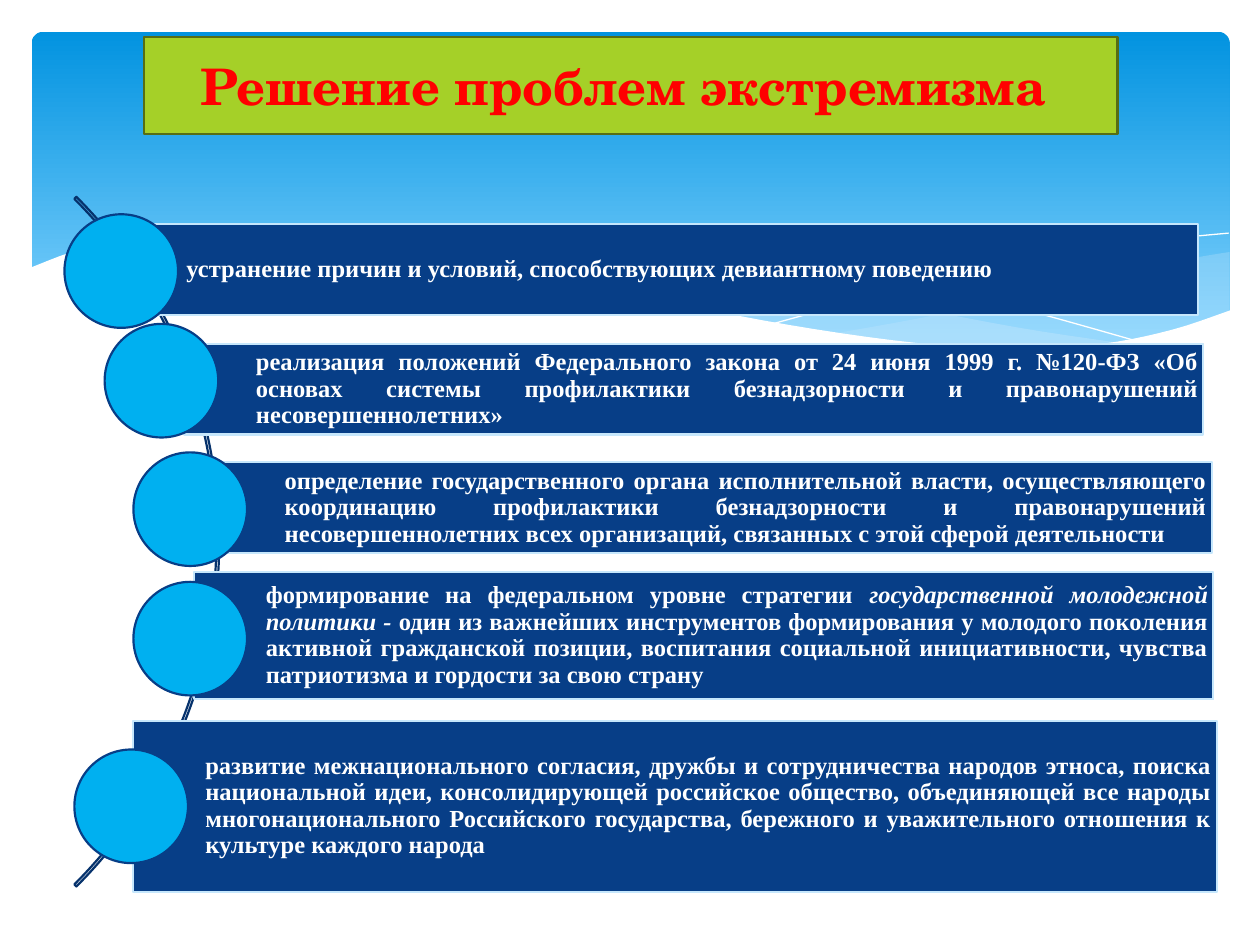
from lxml import etree
from pptx import Presentation
from pptx.dml.color import RGBColor
from pptx.enum.shapes import MSO_SHAPE as Shape
from pptx.enum.text import MSO_ANCHOR as Anchor, PP_ALIGN as Align
from pptx.oxml.ns import qn
from pptx.util import Cm, Pt

WAVE_BAND = [
    [(22.68, 6.93), (20.5, 6.6), (17.93, 6.1), (15.98, 5.64), (13.74, 5.16),
     (11.81, 4.85), (9.65, 4.7), (7.26, 4.85)],
    [(7.26, 4.85), (9.19, 5.16), (11.4, 5.64), (13.46, 6.1), (16.1, 6.63),
     (18.34, 6.96), (20.5, 7.06), (22.68, 6.93)],
]
WAVE_RIGHT = [
    [(24.79, 5.08), (23.75, 5.26), (21.87, 5.66), (19.13, 6.3), (16.79, 6.73)],
    [(16.79, 6.73), (18.26, 6.91), (20.4, 7.06), (22.15, 6.96), (23.57, 6.68),
     (24.79, 6.27)],
]
WAVE_LINES = [
    [(7.85, 4.95), (8.97, 4.8), (10.57, 4.75), (12.95, 4.88), (15.44, 5.18),
     (17.65, 5.56), (20.19, 6.12), (23.04, 6.91)],
    [(15.57, 6.53), (17.65, 5.97), (19.71, 5.49), (22, 5.05), (23.47, 4.83),
     (24.77, 4.7)],
]
WHITE_WAVE = [
    [(24.82, 6.25), (23.62, 6.65), (22.23, 6.93), (20.55, 7.04), (18.44, 6.91),
     (15.9, 6.55), (13.44, 6.07), (11.35, 5.59), (9.27, 5.13), (7.42, 4.83),
     (5.84, 4.7), (4.5, 4.67), (3.02, 4.75), (1.7, 5), (0.58, 5.41)],
    [(0.58, 8.36), (24.82, 8.36)],
]

# Each measure: bar (left, top, width, height), circle (left, top), (text, italic) runs
MEASURES = [
    ((2.31, 4.52, 21.84, 1.83), (1.3, 4.32), [
        ("устранение причин и условий, способствующих девиантному поведению", False)]),
    ((3.71, 6.93, 20.55, 1.83), (2.11, 6.53), [
        ("реализация положений Федерального закона от 24 июня 1999 г. №120-ФЗ "
         "«Об основах системы профилактики безнадзорности и правонарушений "
         "несовершеннолетних»", False)]),
    ((4.29, 9.32, 20.14, 1.83), (2.69, 9.12), [
        ("определение государственного органа исполнительной власти, осуществляющего "
         "координацию профилактики безнадзорности и правонарушений несовершеннолетних "
         "всех организаций, связанных с этой сферой деятельности", False)]),
    ((3.91, 11.53, 20.55, 2.57), (2.69, 11.73), [
        ("формирование на федеральном уровне стратегии ", False),
        ("государственной молодежной политики - ", True),
        ("один из важнейших инструментов формирования у молодого поколения активной "
         "гражданской позиции, воспитания социальной инициативности, чувства "
         "патриотизма и гордости за свою страну", False)]),
    ((2.69, 14.53, 21.84, 3.45), (1.5, 15.11), [
        ("развитие межнационального согласия, дружбы и сотрудничества народов этноса, "
         "поиска национальной идеи, консолидирующей российское общество, объединяющей "
         "все народы многонационального Российского государства, бережного и "
         "уважительного отношения к культуре каждого народа", False)]),
]


def color(value):
    return RGBColor.from_string(value)


def smooth(knots, steps=5):
    """Points of a Catmull-Rom curve through the knots."""
    if len(knots) < 3:
        return knots
    padded = [knots[0], *knots, knots[-1]]
    points = []
    for a, b, c, d in zip(padded, padded[1:], padded[2:], padded[3:]):
        for step in range(steps):
            t = step / steps
            points.append(tuple(
                (2 * q + (r - p) * t + (2 * p - 5 * q + 4 * r - s) * t ** 2
                 + (3 * q - p - 3 * r + s) * t ** 3) / 2
                for p, q, r, s in zip(a, b, c, d)))
    return points + [knots[-1]]


class SlideBuilder:
    navy, pale, sky, white = "073E87", "C6E7FC", "00B0F0", "FFFFFF"
    body_font, title_font = "Times New Roman", "TeX Gyre Schola"
    circle_size = 2.29

    def __init__(self, page):
        self.page = page

    def paint(self, shape, fill=None, line=None, width=1.25, opacity=None):
        shape.shadow.inherit = False
        if fill:
            shape.fill.solid()
            shape.fill.fore_color.rgb = color(fill)
        else:
            shape.fill.background()
        if opacity:
            tone = shape.fill._xPr.find(qn("a:solidFill"))[0]
            etree.SubElement(tone, qn("a:alpha"), val=str(opacity * 1000))
        if line:
            shape.line.color.rgb = color(line)
            shape.line.width = Pt(width)
        else:
            shape.line.fill.background()
        return shape

    def shape(self, kind, left, top, width, height, adjust=(), **look):
        shape = self.page.shapes.add_shape(
            kind, Cm(left), Cm(top), Cm(width), Cm(height))
        for index, value in enumerate(adjust):
            shape.adjustments[index] = value
        return self.paint(shape, **look)

    def sky_panel(self):
        panel = self.shape(Shape.ROUNDED_RECTANGLE, 0.64, 0.64, 24.15, 6.86, [0.034])
        panel.fill.gradient()
        panel.fill.gradient_angle = 270
        stops = [(0, "0293E0"), (0.9, "83D3FE")]
        for stop, (position, tone) in zip(panel.fill.gradient_stops, stops):
            stop.position = position
            stop.color.rgb = color(tone)

    def wave(self, edges, close=True, **look):
        points = [(Cm(x), Cm(y)) for edge in edges for x, y in smooth(edge)]
        outline = self.page.shapes.build_freeform(*points[0])
        outline.add_line_segments(points[1:], close=close)
        self.paint(outline.convert_to_shape(), **look)

    def text(self, box, runs, font, size, tone, align):
        frame = box.text_frame
        frame.word_wrap = True
        frame.vertical_anchor = Anchor.MIDDLE
        para = frame.paragraphs[0]
        para.alignment = align
        for words, italic in runs:
            span = para.add_run()
            span.text = words
            span.font.name = font
            span.font.size = Pt(size)
            span.font.bold = True
            span.font.italic = italic
            span.font.color.rgb = color(tone)
        return frame

    def title(self, words):
        box = self.shape(Shape.RECTANGLE, 2.9, 0.74, 19.63, 1.96,
                         fill="A5D028", line="566D15")
        self.text(box, [(words, False)], self.title_font, 28.8, "FF0000", Align.CENTER)

    def measure(self, bar, circle, runs):
        box = self.shape(Shape.RECTANGLE, *bar, fill=self.navy, line=self.pale)
        frame = self.text(box, runs, self.body_font, 14, self.white, Align.JUSTIFY)
        frame.margin_left = Cm(1.45)
        frame.margin_top = frame.margin_right = frame.margin_bottom = Cm(0.1)
        frame.paragraphs[0].line_spacing = 0.9
        frame.paragraphs[0].space_after = Pt(4.9)
        self.shape(Shape.OVAL, *circle, self.circle_size, self.circle_size,
                   fill=self.sky, line=self.navy)


def main():
    deck = Presentation()
    deck.slide_width, deck.slide_height = Cm(25.4), Cm(19.05)
    builder = SlideBuilder(deck.slides.add_slide(deck.slide_layouts[6]))

    # Background waves
    builder.sky_panel()
    builder.wave(WAVE_RIGHT, fill=builder.pale, opacity=29)
    builder.wave(WAVE_BAND, fill=builder.pale, opacity=40)
    for curve in WAVE_LINES:
        builder.wave([curve], close=False, line=builder.white, width=0)
    builder.wave(WHITE_WAVE, fill=builder.white)

    # Arc and list of measures
    builder.shape(Shape.BLOCK_ARC, -15.24, 1.09, 19.66, 19.66,
                  [189, 27, 0.003], line="06326C")
    for bar, circle, runs in MEASURES:
        builder.measure(bar, circle, runs)

    # Title
    builder.title("Решение проблем экстремизма ")

    deck.save("out.pptx")


if __name__ == "__main__":
    main()
